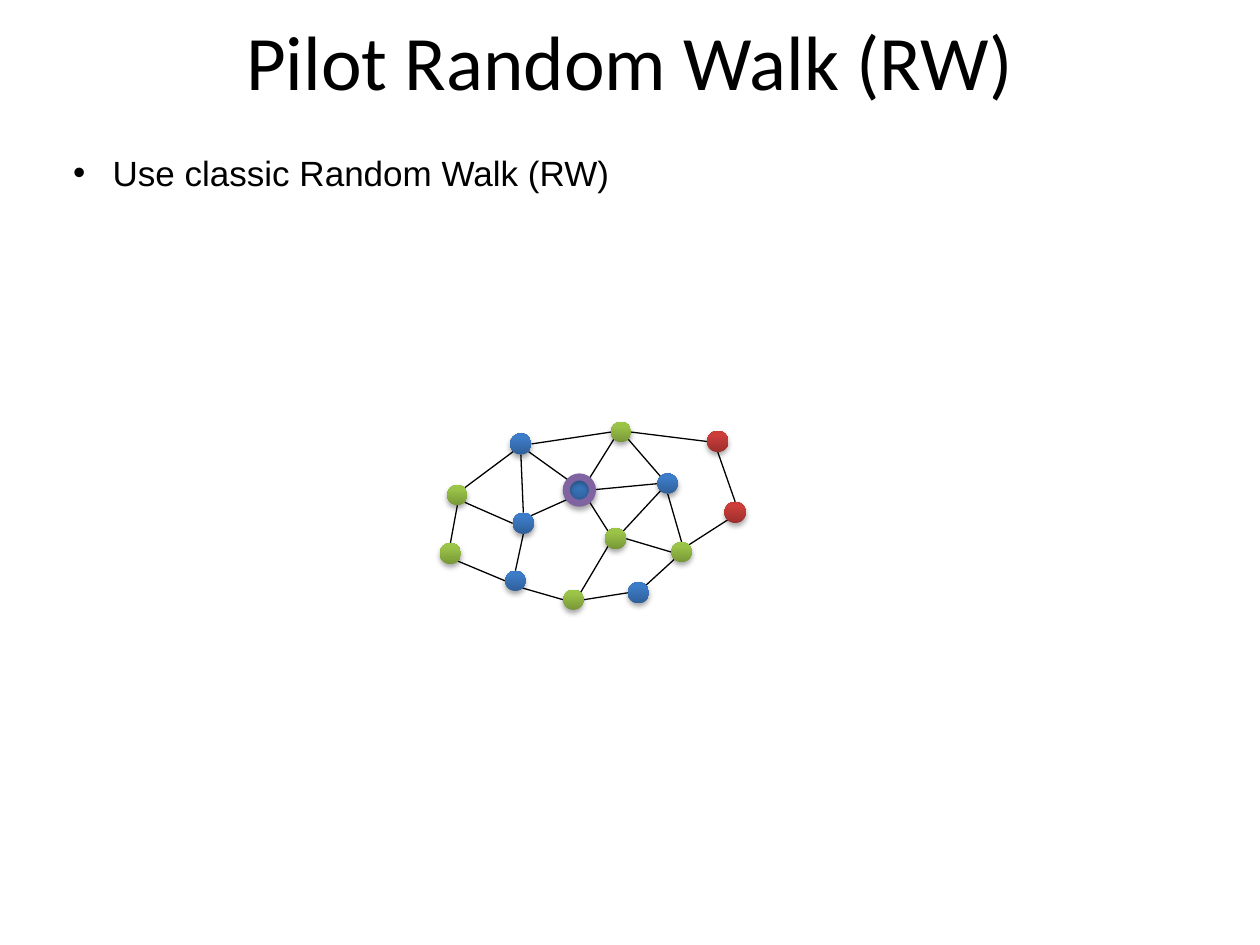
from math import cos, radians, sin

from copy import deepcopy
from lxml import etree
from pptx import Presentation
from pptx.dml.color import RGBColor
from pptx.enum.shapes import MSO_CONNECTOR, MSO_SHAPE
from pptx.enum.text import MSO_ANCHOR, PP_ALIGN
from pptx.oxml.ns import qn
from pptx.util import Cm, Pt

OVAL = MSO_SHAPE.OVAL
STRAIGHT = MSO_CONNECTOR.STRAIGHT
CENTER = PP_ALIGN.CENTER
MIDDLE = MSO_ANCHOR.MIDDLE
TOP = MSO_ANCHOR.TOP

BLACK = RGBColor(0x00, 0x00, 0x00)
PURPLE = RGBColor(0x80, 0x64, 0xA2)
BLUE = [RGBColor(0x2F, 0x5F, 0x99), RGBColor(0x3D, 0x7C, 0xC7), RGBColor(0x3A, 0x7C, 0xCB)]
GREEN = [RGBColor(0x77, 0x97, 0x37), RGBColor(0x9B, 0xC3, 0x48), RGBColor(0x9D, 0xC7, 0x46)]
RED = [RGBColor(0x9C, 0x2F, 0x2D), RGBColor(0xCB, 0x3E, 0x3A), RGBColor(0xCE, 0x3B, 0x37)]
STOP_POSITIONS = [0, 0.8, 1]

N, NW, W, SW, S, SE, E, NE = range(90, 450, 45)

NODES = {
    "A": (10.5, 8.95, 0.43, BLUE),
    "B": (12.52, 8.71, 0.41, GREEN),
    "C": (14.47, 8.9, 0.43, RED),
    "D": (9.22, 9.98, 0.41, GREEN),
    "Pilot": (11.68, 9.88, 0.41, BLUE),
    "F": (13.46, 9.75, 0.41, BLUE),
    "G": (14.82, 10.33, 0.43, RED),
    "H": (10.55, 10.55, 0.43, BLUE),
    "I": (12.41, 10.86, 0.43, GREEN),
    "J": (13.74, 11.13, 0.41, GREEN),
    "K": (9.08, 11.16, 0.43, GREEN),
    "L": (10.39, 11.71, 0.41, BLUE),
    "M": (11.56, 12.09, 0.41, GREEN),
    "O": (12.87, 11.95, 0.43, BLUE),
}
EDGES = [
    ("J", N, "F", S), ("Pilot", NE, "B", SW), ("C", S, "G", N), ("B", E, "C", W),
    ("G", SW, "J", NE), ("J", SW, "O", NE), ("H", NE, "Pilot", SW), ("H", S, "L", N),
    ("D", SE, "H", W), ("D", S, "K", N), ("K", SE, "L", W), ("L", SE, "M", W),
    ("M", E, "O", W), ("A", E, "B", W), ("A", SE, "Pilot", NW), ("D", NE, "A", SW),
    ("A", S, "H", N), ("B", SE, "F", NW), ("Pilot", E, "F", W), ("I", SW, "M", NE),
    ("F", SW, "I", NE), ("Pilot", SE, "I", NW), ("I", E, "J", W),
]


def rim_point(node, angle):
    x, y, diameter, _ = NODES[node]
    radius = diameter / 2
    return Cm(x + radius * cos(radians(angle))), Cm(y - radius * sin(radians(angle)))


def add_circle(shapes, x, y, diameter):
    circle = shapes.add_shape(OVAL, Cm(x - diameter / 2), Cm(y - diameter / 2),
                              Cm(diameter), Cm(diameter))
    circle.shadow.inherit = False
    effects = circle.element.spPr.find(qn("a:effectLst"))
    shadow = etree.SubElement(effects, qn("a:outerShdw"), blurRad=str(Pt(3.1)),
                              dist=str(Pt(1.8)), dir="5400000", rotWithShape="0")
    shadow_color = etree.SubElement(shadow, qn("a:srgbClr"), val=str(BLACK))
    etree.SubElement(shadow_color, qn("a:alpha"), val="35000")
    return circle


prs = Presentation()
prs.slide_width, prs.slide_height = Cm(25.4), Cm(19.05)
slide = prs.slides.add_slide(prs.slide_layouts[1])

title = slide.shapes.title
title.left, title.top, title.width, title.height = Cm(1.27), Cm(0), Cm(22.86), Cm(2.41)
title.text_frame.vertical_anchor = MIDDLE
heading = title.text_frame.paragraphs[0]
heading.alignment = CENTER
heading_run = heading.add_run()
heading_run.text = "Pilot Random Walk (RW)"
heading_run.font.name = "Calibri"
heading_run.font.size = Pt(44)
heading_run.font.color.rgb = BLACK

body = slide.placeholders[1]
body.left, body.top, body.width, body.height = Cm(1.22), Cm(2.08), Cm(22.63), Cm(3.68)
body.text_frame.vertical_anchor = TOP
point = body.text_frame.paragraphs[0]
point.line_spacing = 2
point.space_before = Pt(0)
point_format = point._p.get_or_add_pPr()
point_format.set("marL", str(Cm(0.6)))
point_format.set("indent", str(Cm(-0.6)))
etree.SubElement(point_format, qn("a:buFont"), typeface="Arial")
etree.SubElement(point_format, qn("a:buChar"), char="•")
point_run = point.add_run()
point_run.text = " Use classic Random Walk (RW)"
point_run.font.name = "Arial"
point_run.font.size = Pt(20)
point_run.font.color.rgb = BLACK

graph = slide.shapes.add_group_shape()
for start, start_angle, end, end_angle in EDGES:
    edge = graph.shapes.add_connector(STRAIGHT, *rim_point(start, start_angle),
                                      *rim_point(end, end_angle))
    edge.line.color.rgb = BLACK
    edge.line.width = Pt(0.75)
    etree.SubElement(edge._element.spPr, qn("a:effectLst"))

for x, y, diameter, shades in NODES.values():
    node = add_circle(graph.shapes, x, y, diameter)
    node.line.fill.background()
    node.fill.gradient()
    node.fill.gradient_angle = 90
    stop_list = node.element.spPr.find(qn("a:gradFill")).find(qn("a:gsLst"))
    stop_list.append(deepcopy(stop_list[-1]))
    for stop, shade, position in zip(node.fill.gradient_stops, shades, STOP_POSITIONS):
        stop.color.rgb = shade
        stop.position = position

pilot_x, pilot_y, _, _ = NODES["Pilot"]
pilot_ring = add_circle(slide.shapes, pilot_x, pilot_y, 0.53)
pilot_ring.fill.background()
pilot_ring.line.color.rgb = PURPLE
pilot_ring.line.width = Pt(4)

prs.save("out.pptx")
